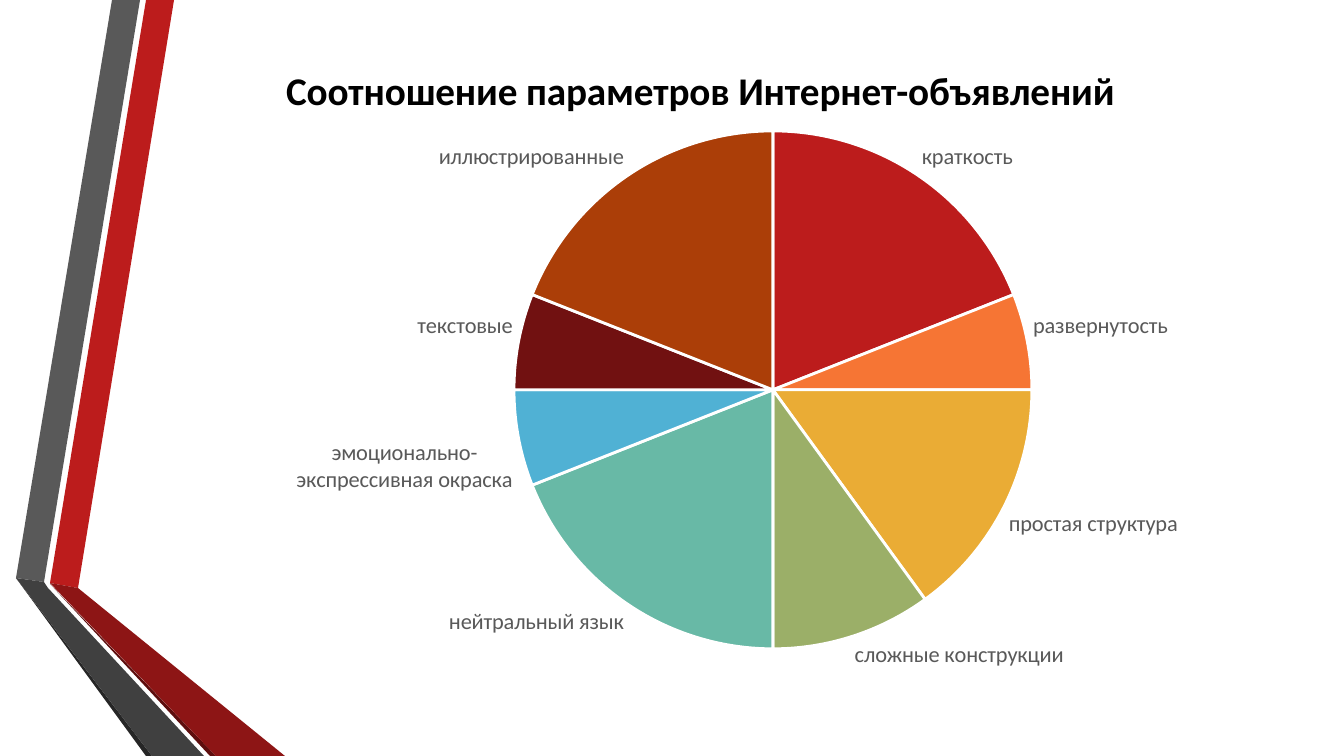
from pptx import Presentation
from pptx.chart.data import CategoryChartData
from pptx.dml.color import RGBColor
from pptx.enum.chart import XL_CHART_TYPE, XL_LABEL_POSITION
from pptx.oxml import parse_xml
from pptx.oxml.ns import nsdecls
from pptx.util import Pt

PIE = XL_CHART_TYPE.PIE
OUTSIDE_END = XL_LABEL_POSITION.OUTSIDE_END

# Content
TITLE = "Соотношение параметров Интернет-объявлений"
SLICES = [
    ("краткость", 19, "BC1C1C"),
    ("развернутость", 6, "F67534"),
    ("простая структура", 15, "EAAC35"),
    ("сложные конструкции", 10, "9BAF68"),
    ("нейтральный язык", 19, "68B9A6"),
    ("эмоционально-экспрессивная окраска", 6, "50B1D4"),
    ("текстовые", 6, "711111"),
    ("иллюстрированные", 19, "AB3E08"),
]
RIBBONS = [
    ("BC1C1C", [(50, 583), (78, 588), (174, 0), (146, 0)]),
    ("595959", [(140, 0), (112, 0), (16, 578), (44, 582)]),
    ("262626", [(16, 578), (146, 756), (152, 756)]),
    ("5E0E0E", [(50, 584), (210, 756), (216, 756)]),
    ("8D1515", [(50, 583), (216, 756), (285, 756), (78, 588)]),
    ("404040", [(204, 756), (48, 588), (44, 582), (16, 578), (152, 756)]),
]
TITLE_FONT = {"name": "Calibri", "size": Pt(28), "bold": True}
LABEL_FONT = {"name": "Calibri", "size": Pt(16), "bold": False}
LABEL_FORMAT = {
    "show_category_name": True,
    "show_value": False,
    "show_percentage": False,
    "show_legend_key": False,
    "position": OUTSIDE_END,
}

# Geometry in px
PX = 914400 / 100.8
SLIDE_WIDTH, SLIDE_HEIGHT = 1344, 756
CHART_LEFT, CHART_TOP, CHART_WIDTH, CHART_HEIGHT = 144, 30, 1200, 660
PIE_LEFT, PIE_TOP, PIE_SIZE = 514, 131, 518
TITLE_LEFT, TITLE_TOP = 279, 57


def emu(px):
    return round(px * PX)


def color(hex_value):
    return RGBColor.from_string(hex_value)


def set_format(target, values):
    for name, value in values.items():
        setattr(target, name, value)


def set_font(font, values, hex_value):
    set_format(font, values)
    font.color.rgb = color(hex_value)


def manual_layout(left, top, size=None):
    """Layout element holding fractions of the chart area."""
    parts = ['<c:layoutTarget val="inner"/>'] if size else []
    parts += ['<c:xMode val="edge"/>', '<c:yMode val="edge"/>']
    fractions = {"x": (left - CHART_LEFT) / CHART_WIDTH,
                 "y": (top - CHART_TOP) / CHART_HEIGHT}
    if size:
        fractions.update(w=size / CHART_WIDTH, h=size / CHART_HEIGHT)
    parts += [f'<c:{key} val="{value:.4f}"/>' for key, value in fractions.items()]
    return parse_xml(f'<c:layout {nsdecls("c")}><c:manualLayout>'
                     f'{"".join(parts)}</c:manualLayout></c:layout>')


def place(element, layout, index):
    for old in element.xpath("c:layout"):
        element.remove(old)
    element.insert(index, layout)


def add_ribbon(page, hex_value, points):
    builder = page.shapes.build_freeform(*points[0], scale=PX)
    builder.add_line_segments(points[1:], close=True)
    shape = builder.convert_to_shape()
    shape.shadow.inherit = False
    shape.fill.solid()
    shape.fill.fore_color.rgb = color(hex_value)
    shape.line.fill.background()


def add_pie(page):
    data = CategoryChartData()
    data.categories = [name for name, _, _ in SLICES]
    data.add_series("Series 1", [value for _, value, _ in SLICES])
    box = map(emu, (CHART_LEFT, CHART_TOP, CHART_WIDTH, CHART_HEIGHT))
    chart = page.shapes.add_chart(PIE, *box, data).chart
    chart.has_legend = False
    set_font(chart.font, LABEL_FONT, "000000")

    # Title
    chart.has_title = True
    frame = chart.chart_title.text_frame
    frame.text = TITLE
    set_font(frame.paragraphs[0].runs[0].font, TITLE_FONT, "000000")
    place(chart.chart_title.element, manual_layout(TITLE_LEFT, TITLE_TOP), 1)
    plot_area = chart.element.xpath("c:chart/c:plotArea")[0]
    place(plot_area, manual_layout(PIE_LEFT, PIE_TOP, PIE_SIZE), 0)

    # Slices and labels
    plot = chart.plots[0]
    plot.vary_by_categories = True
    series = plot.series[0]
    for index, (_, _, hex_value) in enumerate(SLICES):
        slice_format = series.points[index].format
        slice_format.fill.solid()
        slice_format.fill.fore_color.rgb = color(hex_value)
        slice_format.line.color.rgb = color("FFFFFF")
        slice_format.line.width = Pt(2)
    labels = series.data_labels
    set_format(labels, LABEL_FORMAT)
    set_font(labels.font, LABEL_FONT, "595959")


def main():
    deck = Presentation()
    deck.slide_width, deck.slide_height = emu(SLIDE_WIDTH), emu(SLIDE_HEIGHT)
    page = deck.slides.add_slide(deck.slide_layouts[6])
    for hex_value, points in RIBBONS:
        add_ribbon(page, hex_value, points)
    add_pie(page)
    deck.save("out.pptx")


if __name__ == "__main__":
    main()
